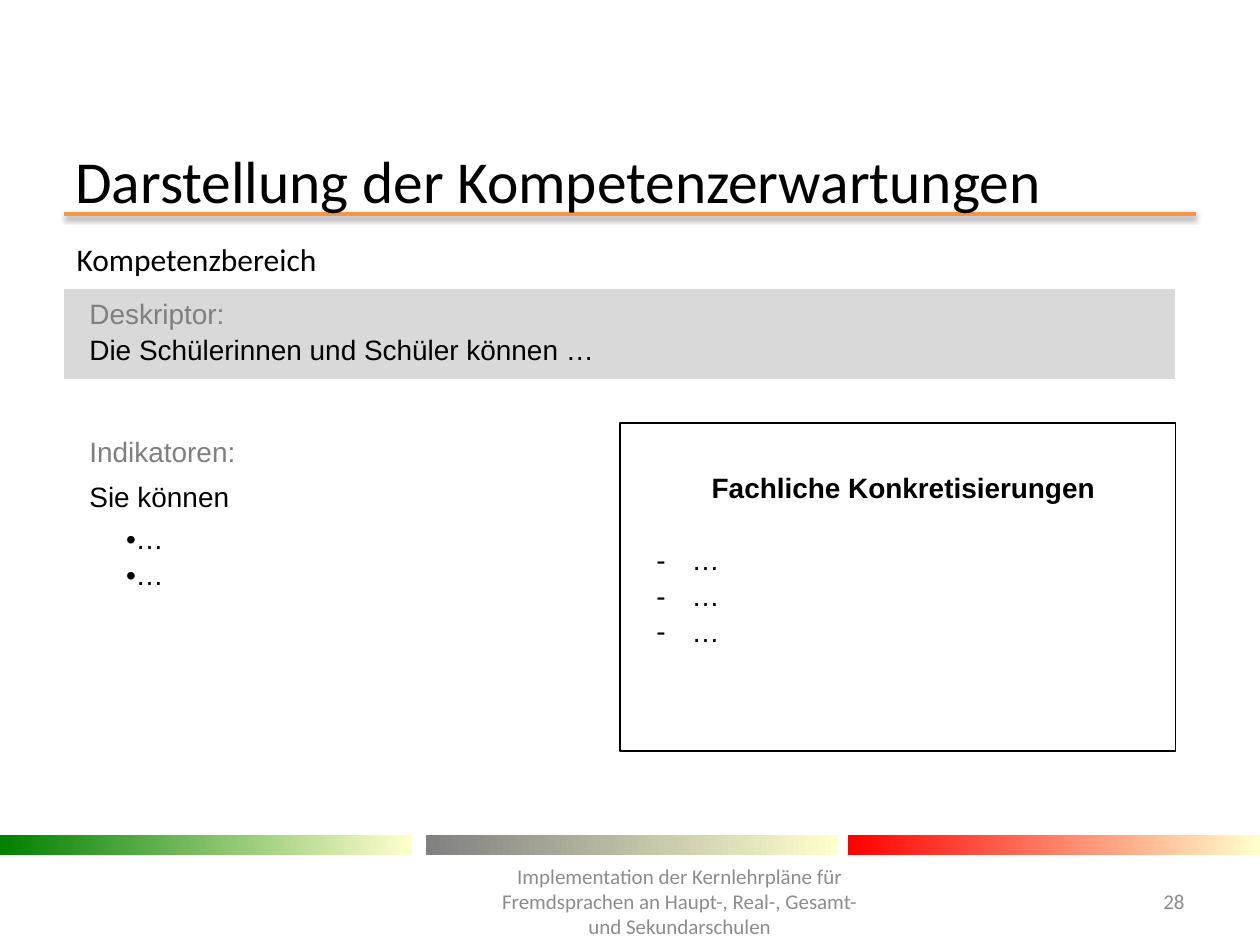
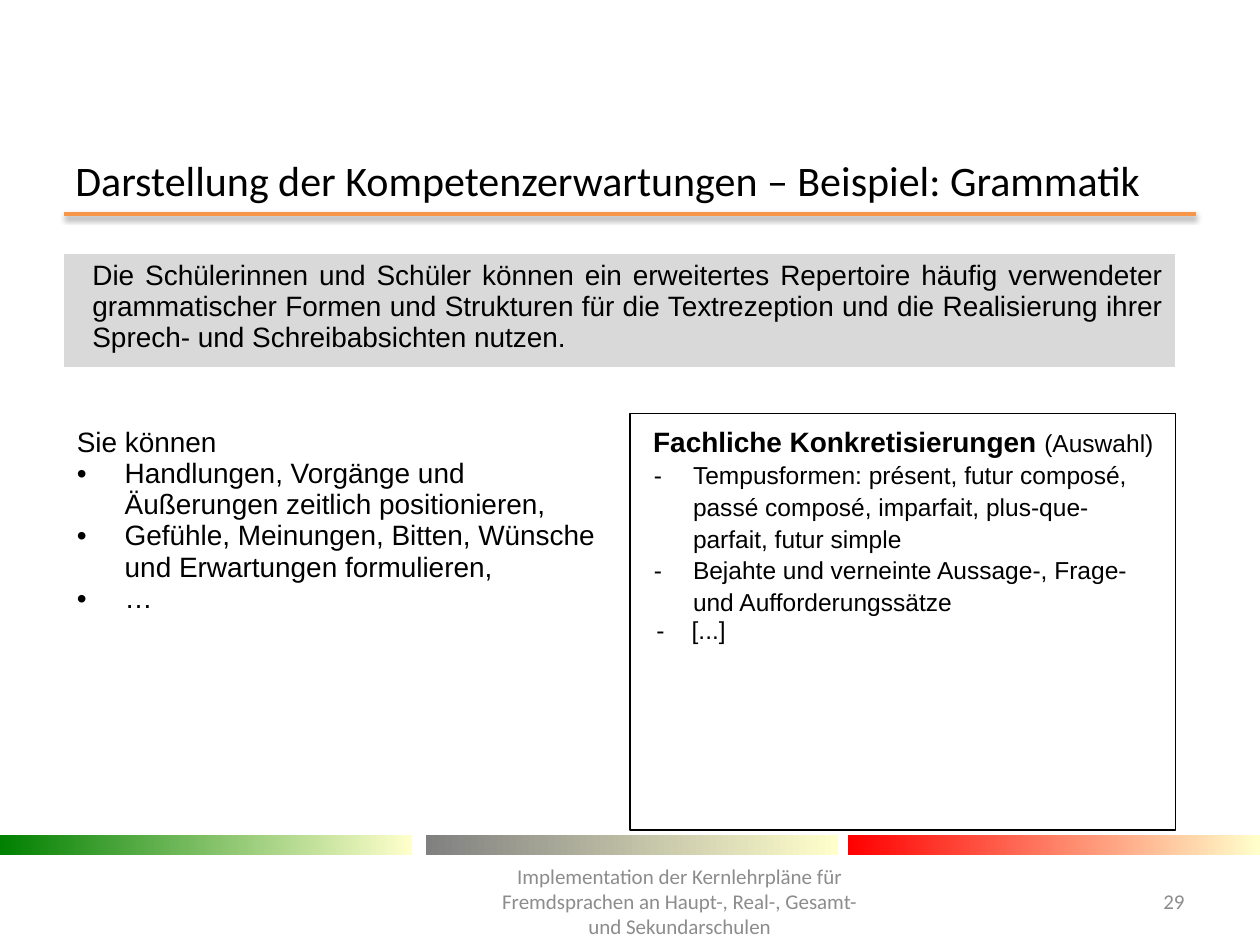
"""Builds two slides on how competence expectations are laid out."""
from lxml import etree
from pptx import Presentation
from pptx.dml.color import RGBColor
from pptx.enum.shapes import MSO_CONNECTOR as Line, MSO_SHAPE as Shape
from pptx.enum.text import MSO_ANCHOR as Anchor, PP_ALIGN as Align
from pptx.oxml import parse_xml
from pptx.oxml.ns import nsdecls, qn
from pptx.util import Pt

BLACK = RGBColor(0x00, 0x00, 0x00)
WHITE = RGBColor(0xFF, 0xFF, 0xFF)
LABEL_GREY = RGBColor(0x7F, 0x7F, 0x7F)
FOOTER_GREY = RGBColor(0x8C, 0x8C, 0x8C)
DESCRIPTOR_GREY = RGBColor(0xD9, 0xD9, 0xD9)
ORANGE = RGBColor(0xF7, 0x96, 0x46)
CREAM = RGBColor(0xFF, 0xFF, 0xCC)
BAND_COLOURS = [RGBColor(0x00, 0x80, 0x00), RGBColor(0x80, 0x80, 0x80), RGBColor(0xFF, 0x00, 0x00)]
BAND_LEFTS = [0, 243.4, 484.6]
NO_GRID_STYLE = "{2D5ABB26-0587-4C30-8999-92F81FD0307C}"
FOOTER = "Implementation der Kernlehrpläne für Fremdsprachen an Haupt-, Real-, Gesamt- und Sekundarschulen"
LINE_SHADOW = (
    f'<a:effectLst {nsdecls("a")}><a:outerShdw blurRad="{Pt(3.1)}" dist="{Pt(1.6)}" dir="5400000" '
    'rotWithShape="0"><a:srgbClr val="000000"><a:alpha val="38000"/></a:srgbClr>'
    "</a:outerShdw></a:effectLst>"
)


def write(frame, paragraphs, **base):
    """Write (runs, layout) pairs; each run is (text, font changes)."""
    for number, (runs, layout) in enumerate(paragraphs):
        paragraph = frame.add_paragraph() if number else frame.paragraphs[0]
        layout = dict(layout)
        properties = paragraph._p.get_or_add_pPr()
        margin, indent = layout.pop("indent", (0, 0))
        properties.set("marL", str(Pt(margin)))
        properties.set("indent", str(Pt(indent)))
        bullet = layout.pop("bullet", None)
        if bullet:
            etree.SubElement(properties, qn("a:buFont")).set("typeface", "Arial")
            etree.SubElement(properties, qn("a:buChar")).set("char", bullet)
        for name, value in layout.items():
            setattr(paragraph, name, value)
        for text, changes in runs:
            run = paragraph.add_run()
            run.text = text
            look = {"name": "Arial", "size": Pt(16), "color": BLACK, **base, **changes}
            run.font.color.rgb = look.pop("color")
            for name, value in look.items():
                setattr(run.font, name, value)


def add_label(slide, place, text, size, align=Align.LEFT, anchor=Anchor.MIDDLE, color=BLACK):
    """Add one Calibri text box."""
    frame = slide.shapes.add_textbox(*map(Pt, place)).text_frame
    frame.word_wrap = True
    frame.vertical_anchor = anchor
    write(frame, [([(text, {})], {"alignment": align})], name="Calibri", size=Pt(size), color=color)


wide = {"line_spacing": 1.15}
inset = {**wide, "indent": (7.2, 0)}
indicator = {**wide, "indent": (7.2, 20.9), "bullet": "•"}
dash = {**wide, "indent": (27.36, -20.16), "bullet": "-"}
example = {"indent": (27.36, -27.36), "bullet": "•"}
example_dash = {**wide, "indent": (28.08, -22.32), "bullet": "-"}
small = {"size": Pt(14)}
grey = {"color": LABEL_GREY}
bold = {"bold": True}

pages = [
    {
        "number": "28",
        "title": "Darstellung der Kompetenzerwartungen",
        "title_size": 34,
        "table_top": 165,
        "rows": [48, 27.4, 246],
        "descriptor": [
            ([("Deskriptor:", grey)], inset),
            ([("Die Schülerinnen und Schüler können …", {})], inset),
        ],
        "indicators": [
            ([("Indikatoren:", grey)], inset),
            ([("Sie können", {})], {**inset, "space_before": Pt(5)}),
            ([("…", {})], {**indicator, "space_before": Pt(4)}),
            ([("…", {})], indicator),
        ],
        "details": [
            ([("Fachliche Konkretisierungen", bold)], {**wide, "alignment": Align.CENTER}),
            ([("…", {})], {**dash, "space_before": Pt(20.6)}),
            ([("…", {})], dash),
            ([("…", {})], dash),
        ],
        "details_margin": 24.2,
        "details_frame": (354.2, 241.9, 317.5, 187.2),
    },
    {
        "number": "29",
        "title": "Darstellung der Kompetenzerwartungen – Beispiel: Grammatik",
        "title_size": 24,
        "table_top": 145.2,
        "rows": [60.3, 28, 264],
        "descriptor": [
            ([("Die Schülerinnen und Schüler können ein erweitertes Repertoire häufig verwendeter "
               "grammatischer Formen und Strukturen für die Textrezeption und die Realisierung "
               "ihrer Sprech- und Schreibabsichten nutzen.", {})],
             {"indent": (8.9, 0), "alignment": Align.JUSTIFY}),
        ],
        "indicators": [
            ([("Sie können", {})], wide),
            ([("Handlungen, Vorgänge und Äußerungen zeitlich positionieren,", {})], example),
            ([("Gefühle, Meinungen, Bitten, Wünsche und Erwartungen formulieren,", {})], example),
            ([("…", {})], example),
        ],
        "details": [
            ([("Fachliche Konkretisierungen ", bold), ("(Auswahl)", small)],
             {**wide, "alignment": Align.CENTER}),
            ([("Tempusformen: présent, futur composé, passé composé, imparfait, "
               "plus-que-parfait, futur simple", small)], example_dash),
            ([("Bejahte und verneinte Aussage-, Frage- und Aufforderungssätze", small)], example_dash),
            ([("[...]", small)], {**dash, "line_spacing": 1.0}),
        ],
        "details_margin": 3.6,
        "details_frame": (360, 236.2, 311.8, 238.3),
    },
]

deck = Presentation()
deck.slide_width, deck.slide_height = Pt(720), Pt(540)

for page in pages:
    slide = deck.slides.add_slide(deck.slide_layouts[6])

    title_rule = slide.shapes.add_connector(Line.STRAIGHT, Pt(36.7), Pt(122.4), Pt(683.3), Pt(122.4))
    title_rule.line.color.rgb = ORANGE
    title_rule.line.width = Pt(2)
    title_rule._element.spPr.append(parse_xml(LINE_SHADOW))

    for left, colour in zip(BAND_LEFTS, BAND_COLOURS):
        band = slide.shapes.add_shape(Shape.RECTANGLE, Pt(left), Pt(477.2), Pt(235.4), Pt(11.5))
        band.shadow.inherit = False
        band.line.fill.background()
        band.fill.gradient()
        band.fill.gradient_angle = 0
        for stop, position, shade in zip(band.fill.gradient_stops, (0, 1), (colour, CREAM)):
            stop.position = position
            stop.color.rgb = shade

    add_label(slide, (36, 88.6, 648, 28), page["title"], page["title_size"])
    add_label(slide, (275, 500.4, 226.8, 28.8), FOOTER, 12, Align.CENTER, color=FOOTER_GREY)
    add_label(slide, (638, 500.4, 46, 28.8), page["number"], 12, Align.RIGHT, color=FOOTER_GREY)

    grid = slide.shapes.add_table(
        3, 2, Pt(36.7), Pt(page["table_top"]), Pt(635), Pt(sum(page["rows"]))
    ).table
    grid._tbl.tblPr.find(qn("a:tableStyleId")).text = NO_GRID_STYLE
    grid.first_row = grid.horz_banding = False
    for column, width in zip(grid.columns, (324, 311)):
        column.width = Pt(width)
    for row, height in zip(grid.rows, page["rows"]):
        row.height = Pt(height)
    for row_number, colour in enumerate((DESCRIPTOR_GREY, WHITE)):
        for column_number in range(2):
            cell = grid.cell(row_number, column_number)
            cell.fill.solid()
            cell.fill.fore_color.rgb = colour
        grid.cell(row_number, 0).merge(grid.cell(row_number, 1))
    spacer = grid.cell(1, 0)
    spacer.margin_top = spacer.margin_bottom = 0
    descriptor, indicators, details = grid.cell(0, 0), grid.cell(2, 0), grid.cell(2, 1)
    indicators.fill.background()
    details.fill.background()
    details.margin_top = Pt(page["details_margin"])
    write(descriptor.text_frame, page["descriptor"])
    write(indicators.text_frame, page["indicators"])
    write(details.text_frame, page["details"])

    if page is pages[0]:
        add_label(slide, (36.7, 133.9, 266.4, 28.8), "Kompetenzbereich", 18, anchor=Anchor.TOP)

    details_frame = slide.shapes.add_shape(Shape.RECTANGLE, *map(Pt, page["details_frame"]))
    details_frame.shadow.inherit = False
    details_frame.fill.background()
    details_frame.line.color.rgb = BLACK
    details_frame.line.width = Pt(1)

deck.save("out.pptx")
